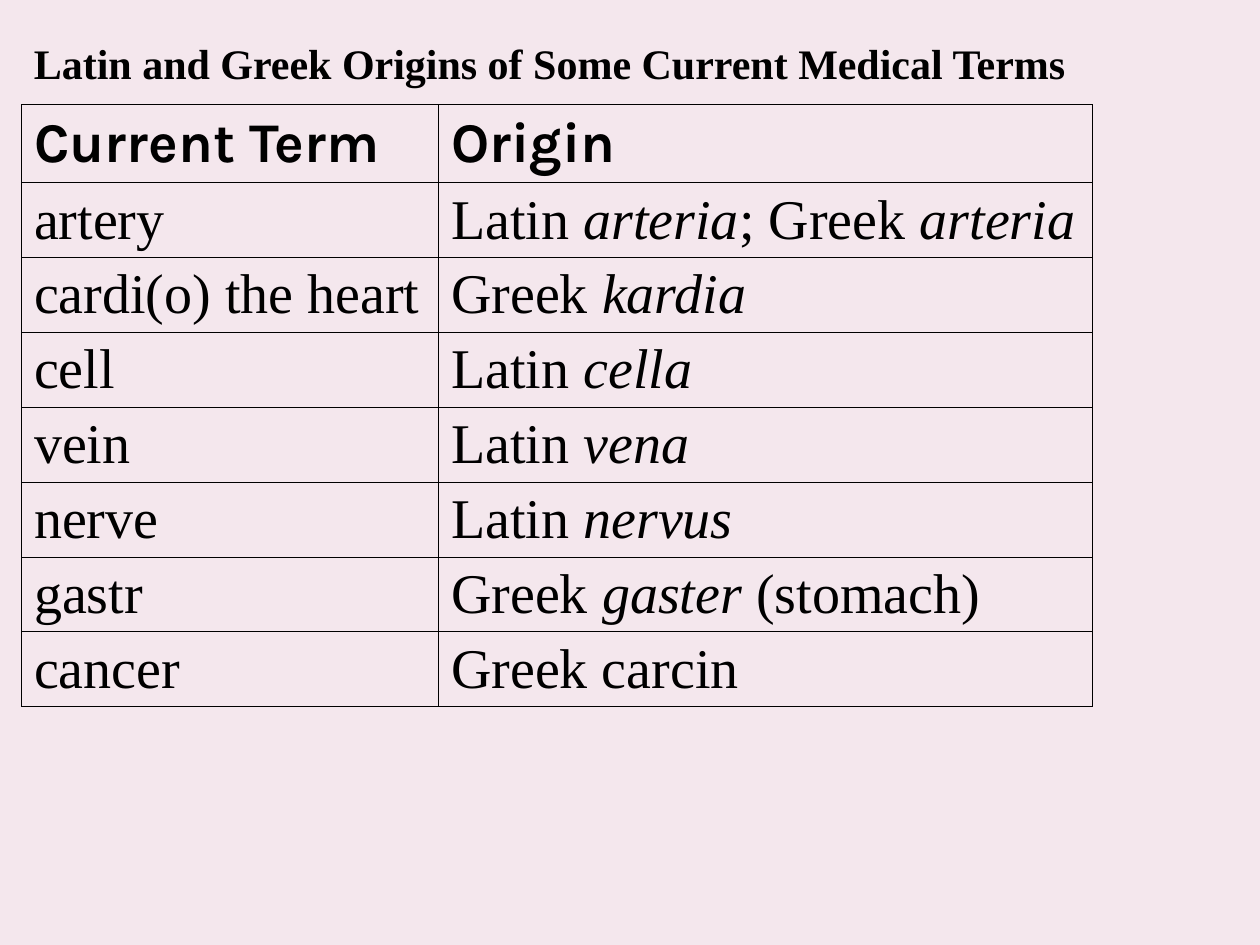
from lxml import etree
from pptx import Presentation
from pptx.dml.color import RGBColor as RGB
from pptx.enum.text import MSO_ANCHOR as Anchor
from pptx.oxml.ns import qn
from pptx.util import Inches, Pt

COLORS = {"background": "F4E7ED", "ink": "000000"}
BODY_FONT, HEADER_FONT = "Times New Roman", "Karla"

# Asterisks enclose the words set in italics
TERMS = [
    ("Current Term", "Origin"),
    ("artery", "Latin *arteria*; Greek *arteria*"),
    ("cardi(o) the heart", "Greek *kardia*"),
    ("cell", "Latin *cella*"),
    ("vein", "Latin *vena*"),
    ("nerve", "Latin *nervus*"),
    ("gastr", "Greek *gaster *(stomach)"),
    ("cancer", "Greek carcin"),
]


def write(paragraph, text, font_name, size, bold):
    for position, part in enumerate(text.split("*")):
        if part:
            run = paragraph.add_run()
            run.text = part
            if position % 2:
                run.font.italic = True
    font = paragraph.font
    font.name, font.size, font.bold = font_name, Pt(size), bold
    font.color.rgb = RGB.from_string(COLORS["ink"])


def add_borders(cell):
    properties = cell._tc.get_or_add_tcPr()
    for index, side in enumerate(("lnL", "lnR", "lnT", "lnB")):
        line = etree.Element(qn(f"a:{side}"), w=str(Pt(0.5)))
        fill = etree.SubElement(line, qn("a:solidFill"))
        etree.SubElement(fill, qn("a:srgbClr"), val=COLORS["ink"])
        properties.insert(index, line)


# Slide and background
prs = Presentation()
prs.slide_width, prs.slide_height = Inches(10), Inches(7.5)
slide = prs.slides.add_slide(prs.slide_layouts[6])
slide.background.fill.solid()
slide.background.fill.fore_color.rgb = RGB.from_string(COLORS["background"])

# Table of terms
terms = slide.shapes.add_table(
    len(TERMS), 2, Inches(0.17), Inches(0.83), Inches(8.5), Inches(4.75)
).table
terms.first_row = terms.horz_banding = False
for column, width in zip(terms.columns, (3.31, 5.19)):
    column.width = Inches(width)

for row, entry in enumerate(TERMS):
    is_header = row == 0
    terms.rows[row].height = Inches(0.62 if is_header else 0.59)
    for col, text in enumerate(entry):
        cell = terms.cell(row, col)
        cell.fill.background()
        cell.vertical_anchor = Anchor.MIDDLE
        add_borders(cell)
        write(cell.text_frame.paragraphs[0], text,
              HEADER_FONT if is_header else BODY_FONT, 32, is_header)

# Title
title = slide.shapes.add_textbox(
    Inches(0.17), Inches(0.25), Inches(8.75), Inches(0.5)
).text_frame
title.word_wrap = True
write(title.paragraphs[0],
      "Latin and Greek Origins of Some Current Medical Terms",
      BODY_FONT, 24, True)

prs.save("out.pptx")
